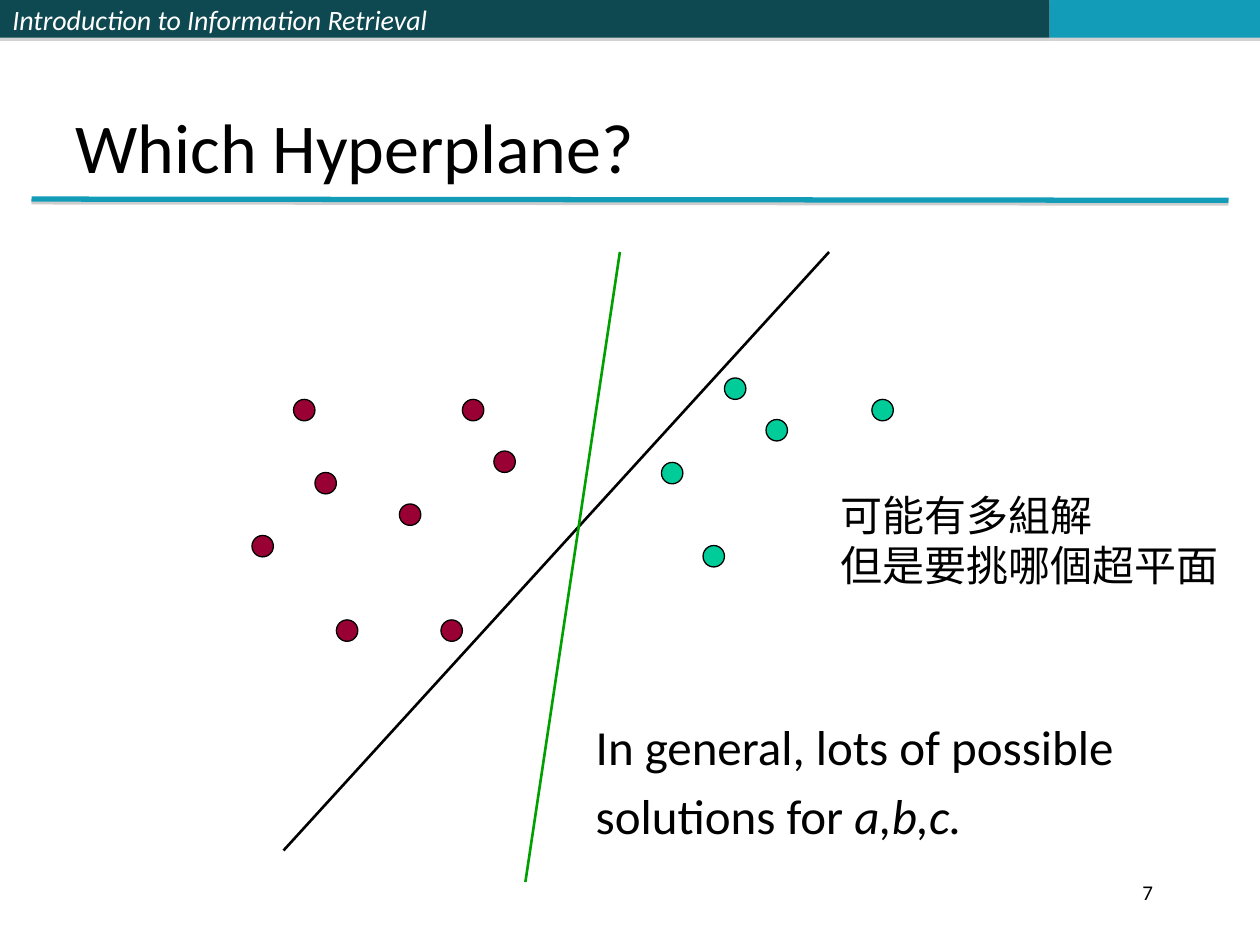
from lxml import etree
from pptx import Presentation
from pptx import util as u
from pptx.dml.color import RGBColor
from pptx.enum import shapes, text
from pptx.oxml import ns

THEME = {
    "dark": "0E4851", "accent": "139CB7", "shadow": "808080",
    "red": "990033", "mint": "00CC99", "green": "00A000",
    "black": "000000", "white": "FFFFFF",
    "latin": "Calibri", "chinese": "Noto Sans CJK SC",
    "title": 40, "body": 28, "note": 24, "header": 16, "number": 12,
}


def write(shape, lines, size, color="black", align=text.PP_ALIGN.LEFT,
          anchor=text.MSO_ANCHOR.TOP, wrap=True, before=0, spacing=None,
          italic=False, font="latin"):
    frame = shape.text_frame
    frame.word_wrap = wrap
    frame.auto_size = text.MSO_AUTO_SIZE.NONE
    frame.vertical_anchor = anchor
    for index, runs in enumerate(lines):
        paragraph = frame.add_paragraph() if index else frame.paragraphs[0]
        paragraph.alignment = align
        paragraph.space_before = u.Pt(before)
        if spacing:
            paragraph.line_spacing = u.Pt(spacing)
        for position, words in enumerate(runs):
            run = paragraph.add_run()
            run.text = words
            run.font.name = THEME[font]
            run.font.size = u.Pt(THEME[size])
            run.font.italic = italic or position > 0
            run.font.bold = False
            run.font.color.rgb = RGBColor.from_string(THEME[color])
            east_asian = etree.SubElement(run._r.get_or_add_rPr(), ns.qn("a:ea"))
            east_asian.set("typeface", THEME["chinese"])


def set_effect(shape, opacity=0, distance=0):
    properties = shape._element.spPr
    for old in properties.findall(ns.qn("a:effectLst")):
        properties.remove(old)
    effects = etree.SubElement(properties, ns.qn("a:effectLst"))
    if opacity:
        shadow = etree.SubElement(effects, ns.qn("a:outerShdw"), blurRad="0",
                                  dist=str(u.Pt(distance)), dir="5400000",
                                  algn="ctr", rotWithShape="0")
        color = etree.SubElement(shadow, ns.qn("a:srgbClr"), val=THEME["shadow"])
        etree.SubElement(color, ns.qn("a:alpha"), val=str(opacity * 1000))


presentation = Presentation()
presentation.slide_width = u.Inches(10)
presentation.slide_height = u.Inches(7.5)
slide = presentation.slides.add_slide(presentation.slide_layouts[5])

bars = []
for left, width, color in [(0, 4.08, "dark"), (4.08, 4.25, "dark"), (8.33, 1.67, "accent")]:
    bar = slide.shapes.add_shape(shapes.MSO_SHAPE.RECTANGLE, u.Inches(left), 0,
                                 u.Inches(width), u.Inches(0.3))
    bar.fill.solid()
    bar.fill.fore_color.rgb = RGBColor.from_string(THEME[color])
    bar.line.fill.background()
    set_effect(bar, 35, 1.8)
    bars.append(bar)
write(bars[0], [["Introduction to Information Retrieval"]], "header", color="white",
      anchor=text.MSO_ANCHOR.MIDDLE, italic=True)

title = slide.shapes.title
title.left, title.top = u.Inches(0.5), u.Inches(0.11)
title.width, title.height = u.Inches(8.99), u.Inches(1.43)
write(title, [["Which Hyperplane?"]], "title", anchor=text.MSO_ANCHOR.BOTTOM)

DIAMETER = 0.17
classes = {
    "red": [(2.33, 3.17), (2.5, 3.75), (2.67, 4.92), (3.67, 3.17),
            (2, 4.25), (3.17, 4), (3.92, 3.58), (3.5, 4.92)],
    "mint": [(5.25, 3.67), (5.58, 4.33), (5.75, 3), (6.92, 3.17), (6.08, 3.33)],
}
for color, points in classes.items():
    for left, top in points:
        point = slide.shapes.add_shape(shapes.MSO_SHAPE.OVAL, u.Inches(left), u.Inches(top),
                                       u.Inches(DIAMETER), u.Inches(DIAMETER))
        point.shadow.inherit = False
        point.fill.solid()
        point.fill.fore_color.rgb = RGBColor.from_string(THEME[color])
        point.line.color.rgb = RGBColor.from_string(THEME["black"])
        point.line.width = u.Pt(0.75)

for ends, color, weight, opacity in [
    ((0.25, 1.58, 9.75, 1.59), "accent", 3, 38),
    ((2.25, 6.75, 6.58, 2), "black", 1.5, 0),
    ((4.17, 7, 4.92, 2), "green", 1.5, 0),
]:
    line = slide.shapes.add_connector(shapes.MSO_CONNECTOR.STRAIGHT,
                                      *[u.Inches(end) for end in ends])
    line.line.color.rgb = RGBColor.from_string(THEME[color])
    line.line.width = u.Pt(weight)
    set_effect(line, opacity, 1.6)

for box, lines, options in [
    ((4.63, 5.64, 4.46, 1.14),
     [["In general, lots of possible"], ["solutions for ", "a,b,c."]],
     {"size": "body", "before": 5.6, "wrap": False}),
    ((6.57, 3.83, 3.23, 0.91), [["可能有多組解"], ["但是要挑哪個超平面"]],
     {"size": "note", "font": "chinese", "spacing": 29, "wrap": False}),
    ((7.17, 6.83, 2.08, 0.5), [["7"]],
     {"size": "number", "align": text.PP_ALIGN.RIGHT, "anchor": text.MSO_ANCHOR.MIDDLE}),
]:
    caption = slide.shapes.add_textbox(*[u.Inches(length) for length in box])
    write(caption, lines, **options)

presentation.save("out.pptx")
